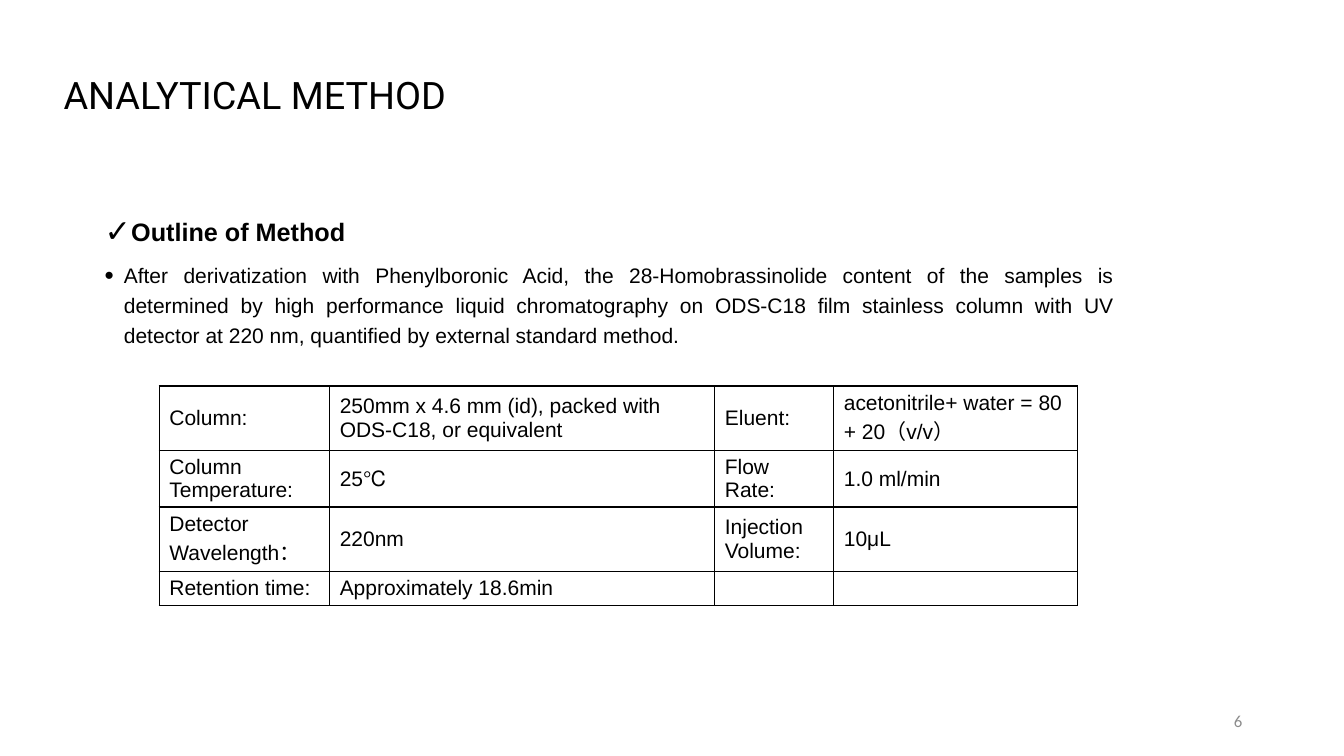
from pptx import Presentation
from pptx.dml.color import RGBColor
from pptx.enum.text import MSO_ANCHOR, MSO_AUTO_SIZE, PP_ALIGN
from pptx.oxml import parse_xml
from pptx.oxml.ns import nsdecls
from pptx.util import Pt

PX = 9144  # 100 px to the inch
BLACK = "000000"


def style(para, text, size, face="Arial", shade=BLACK, bold=False, **form):
    """Write one run into a paragraph and format both."""
    run = para.add_run()
    run.text = text
    run.font.color.rgb = RGBColor.from_string(shade)
    for key, val in {"size": Pt(size), "name": face, "bold": bold}.items():
        setattr(run.font, key, val)
    for key, val in form.items():
        setattr(para, key, val)


def place(shape, box, **form):
    """Put a text shape at a px box and set up its frame."""
    for key, val in zip(("left", "top", "width", "height"), box):
        setattr(shape, key, val * PX)
    frame = shape.text_frame
    form = {"word_wrap": True, "auto_size": MSO_AUTO_SIZE.NONE} | form
    for key, val in form.items():
        setattr(frame, key, val)
    return frame


deck = Presentation()
deck.slide_width, deck.slide_height = 1333 * PX, 750 * PX
slide = deck.slides.add_slide(deck.slide_layouts[5])
shapes = slide.shapes

# Title
frame = place(shapes.title, (53, 36, 812, 121),
              vertical_anchor=MSO_ANCHOR.MIDDLE)
style(frame.paragraphs[0], "ANALYTICAL METHOD", 27, "Roboto",
      alignment=PP_ALIGN.LEFT, line_spacing=0.9)

# Outline
outline = [
    ("✓", "Outline of Method", 18, True),
    ("•", "After derivatization with Phenylboronic Acid, the "
     "28-Homobrassinolide content of the samples is determined by high "
     "performance liquid chromatography on ODS-C18 film stainless column "
     "with UV detector at 220 nm, quantified by external standard method.",
     15, False),
]
frame = place(shapes.add_textbox(0, 0, 0, 0), (94, 204, 1021, 165))
for i, (mark, text, size, bold) in enumerate(outline):
    para = frame.add_paragraph() if i else frame.paragraphs[0]
    style(para, text, size, bold=bold, alignment=PP_ALIGN.JUSTIFY,
          line_spacing=1.2, space_before=Pt(7.5))
    props = para._p.get_or_add_pPr()
    props.set("marL", str(19 * PX))
    props.set("indent", str(-19 * PX))
    for tag in ('buSzPct val="125000"', 'buFont typeface="Arial"',
                f'buChar char="{mark}"'):
        props.append(parse_xml(f"<a:{tag} {nsdecls('a')}/>"))

# Conditions table
rows = [
    ("Column:", "250mm x 4.6 mm (id), packed with ODS-C18, or equivalent",
     "Eluent:", "acetonitrile+ water = 80 + 20（v/v）"),
    ("Column Temperature:", "25℃", "Flow Rate:", "1.0 ml/min"),
    ("Detector Wavelength：", "220nm", "Injection Volume:", "10μL"),
    ("Retention time:", "Approximately 18.6min", "", ""),
]
widths = (169, 382, 118, 242)
heights = (64, 56, 64, 33)
table = shapes.add_table(4, 4, 158 * PX, 383 * PX, sum(widths) * PX,
                         sum(heights) * PX).table
table.first_row = table.horz_banding = False
for col, width in zip(table.columns, widths):
    col.width = width * PX
for row, height, texts in zip(table.rows, heights, rows):
    row.height = height * PX
    for cell, text in zip(row.cells, texts):
        cell.fill.background()
        cell.vertical_anchor = MSO_ANCHOR.MIDDLE
        cell.margin_top = cell.margin_bottom = 4 * PX
        para = cell.text_frame.paragraphs[0]
        if text:
            style(para, text, 15)
        else:
            para._p.get_or_add_endParaRPr().set("sz", "1500")
        props = cell._tc.get_or_add_tcPr()
        for i, side in enumerate("LRTB"):
            props.insert(i, parse_xml(
                f'<a:ln{side} {nsdecls("a")} w="12700"><a:solidFill>'
                f'<a:srgbClr val="{BLACK}"/></a:solidFill></a:ln{side}>'))

# Page number
frame = place(shapes.add_textbox(0, 0, 0, 0), (942, 695, 300, 40),
              vertical_anchor=MSO_ANCHOR.MIDDLE)
style(frame.paragraphs[0], "6", 12, "Calibri", "8C8C8C",
      alignment=PP_ALIGN.RIGHT)

deck.save("out.pptx")
